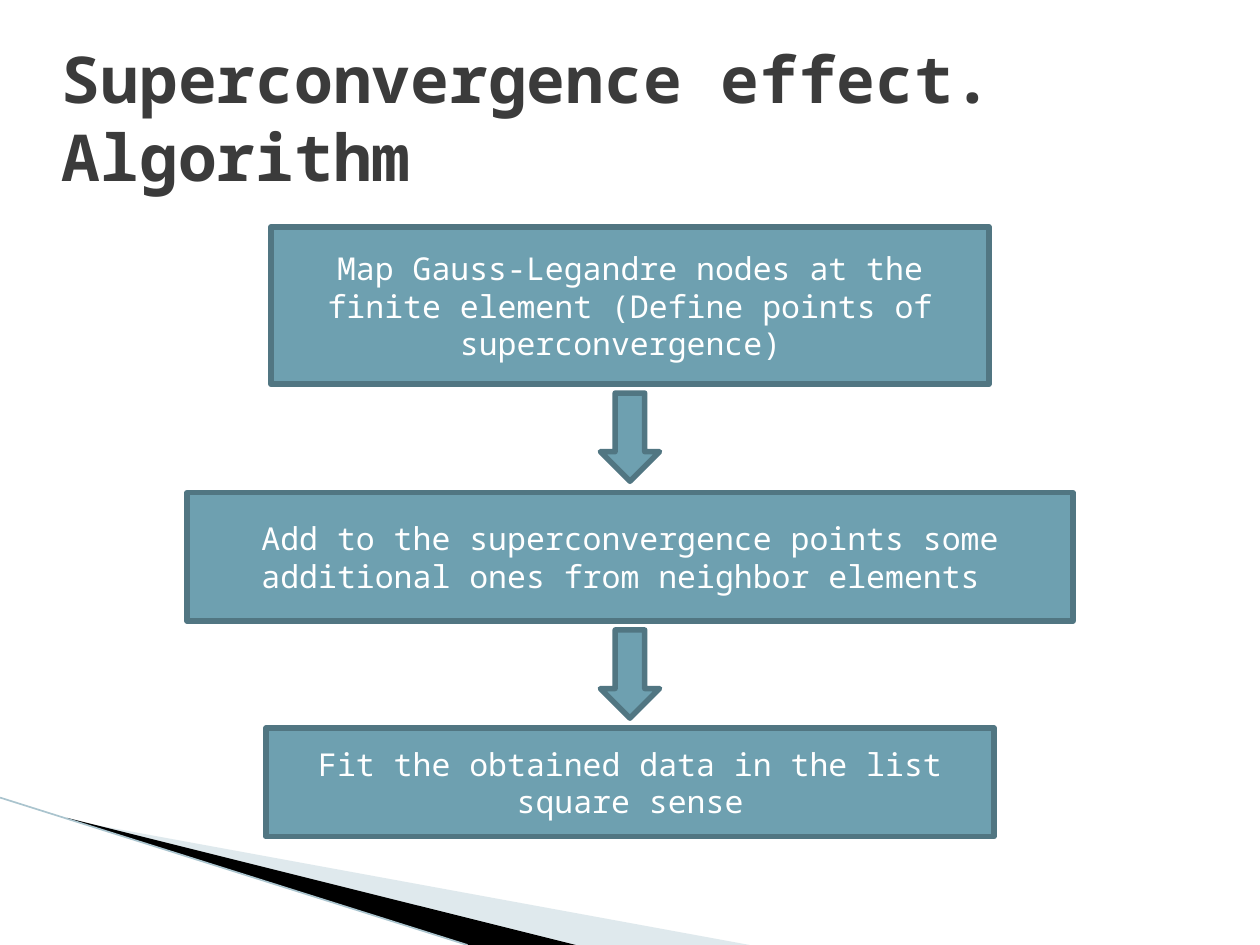
from dataclasses import dataclass

from lxml.etree import SubElement
from pptx import Presentation
from pptx.dml.color import RGBColor
from pptx.enum.shapes import MSO_CONNECTOR as Connector, MSO_SHAPE as Shape
from pptx.enum.text import MSO_ANCHOR as Anchor, PP_ALIGN as Align
from pptx.oxml.ns import qn
from pptx.util import Inches, Pt


@dataclass(frozen=True)
class Theme:
    font: str = "Noto Sans Mono"
    title_size: float = 36.9
    body_size: float = 18
    outline_width: float = 3.15
    edge_width: float = 0.95
    title: str = "3B3B3B"
    light: str = "FFFFFF"
    fill: str = "6EA0B0"
    outline: str = "517682"
    pale: str = "B1C9D2"
    dark: str = "000000"
    edge: str = "AAC4CE"


def write_text(shape, text, *, font, size, color, bold=False,
               align=Align.LEFT, anchor=Anchor.MIDDLE):
    frame = shape.text_frame
    frame.word_wrap = True
    frame.vertical_anchor = anchor
    frame.text = text
    paragraph = frame.paragraphs[0]
    paragraph.alignment = align
    run_font = paragraph.runs[0].font
    run_font.name = font
    run_font.size = Pt(size)
    run_font.bold = bold
    run_font.color.rgb = RGBColor.from_string(color)


class FlowSlide:
    """Draws a vertical flow chart on one slide in a given theme."""

    def __init__(self, presentation, theme):
        self.theme = theme
        self.slide = presentation.slides.add_slide(presentation.slide_layouts[5])
        self.center = presentation.slide_width / 2

    def title(self, text, left, top, width, height):
        shape = self.slide.shapes.title
        shape.left, shape.top = Inches(left), Inches(top)
        shape.width, shape.height = Inches(width), Inches(height)
        write_text(shape, text, font=self.theme.font, size=self.theme.title_size,
                   color=self.theme.title, bold=True)

    def centered_shape(self, kind, top, width, height):
        left = int(self.center - Inches(width) / 2)
        shape = self.slide.shapes.add_shape(
            kind, left, Inches(top), Inches(width), Inches(height))
        shape.shadow.inherit = False
        shape.fill.solid()
        shape.fill.fore_color.rgb = RGBColor.from_string(self.theme.fill)
        shape.line.color.rgb = RGBColor.from_string(self.theme.outline)
        shape.line.width = Pt(self.theme.outline_width)
        return shape

    def step(self, text, top, width, height):
        shape = self.centered_shape(Shape.RECTANGLE, top, width, height)
        write_text(shape, text, font=self.theme.font, size=self.theme.body_size,
                   color=self.theme.light, align=Align.CENTER)

    def arrow(self, top):
        self.centered_shape(Shape.DOWN_ARROW, top, 0.47, 0.7)

    def wedge(self, points, color, opacity=100):
        start, *others = [(Inches(x), Inches(y)) for x, y in points]
        builder = self.slide.shapes.build_freeform(*start)
        builder.add_line_segments(others, close=True)
        shape = builder.convert_to_shape()
        shape.shadow.inherit = False
        shape.fill.solid()
        shape.fill.fore_color.rgb = RGBColor.from_string(color)
        shape.line.fill.background()
        if opacity < 100:
            color_element = next(shape.fill._xPr.iter(qn("a:srgbClr")))
            SubElement(color_element, qn("a:alpha")).set("val", str(opacity * 1000))

    def edge(self, start, end):
        line = self.slide.shapes.add_connector(
            Connector.STRAIGHT, *map(Inches, start + end))
        line.line.color.rgb = RGBColor.from_string(self.theme.edge)
        line.line.width = Pt(self.theme.edge_width)
        SubElement(line._element.spPr, qn("a:effectLst"))


def main():
    presentation = Presentation()
    presentation.slide_width, presentation.slide_height = Inches(10), Inches(7.5)
    theme = Theme()
    flow = FlowSlide(presentation, theme)

    flow.wedge([(0.55, 6.51), (5.95, 7.5), (4.56, 7.5), (0.55, 6.5)], theme.pale, 40)
    flow.wedge([(0.53, 6.49), (4.57, 7.5), (3.72, 7.5), (0.54, 6.5)], theme.dark)
    flow.edge((0, 6.33), (3.71, 7.5))
    flow.title("Superconvergence effect. Algorithm", 0.39, 0.3, 9.27, 1.25)

    steps = [
        ("Map Gauss-Legandre nodes at the finite element "
         "(Define points of superconvergence) ", 1.8, 5.7, 1.25),
        ("Add to the superconvergence points some additional ones "
         "from neighbor elements ", 3.91, 7.03, 1.02),
        ("Fit the obtained data in the list square sense", 5.78, 5.78, 0.86),
    ]
    for text, top, width, height in steps:
        flow.step(text, top, width, height)
    for _, top, _, height in steps[:-1]:
        flow.arrow(top + height + 0.07)

    presentation.save("out.pptx")


if __name__ == "__main__":
    main()
